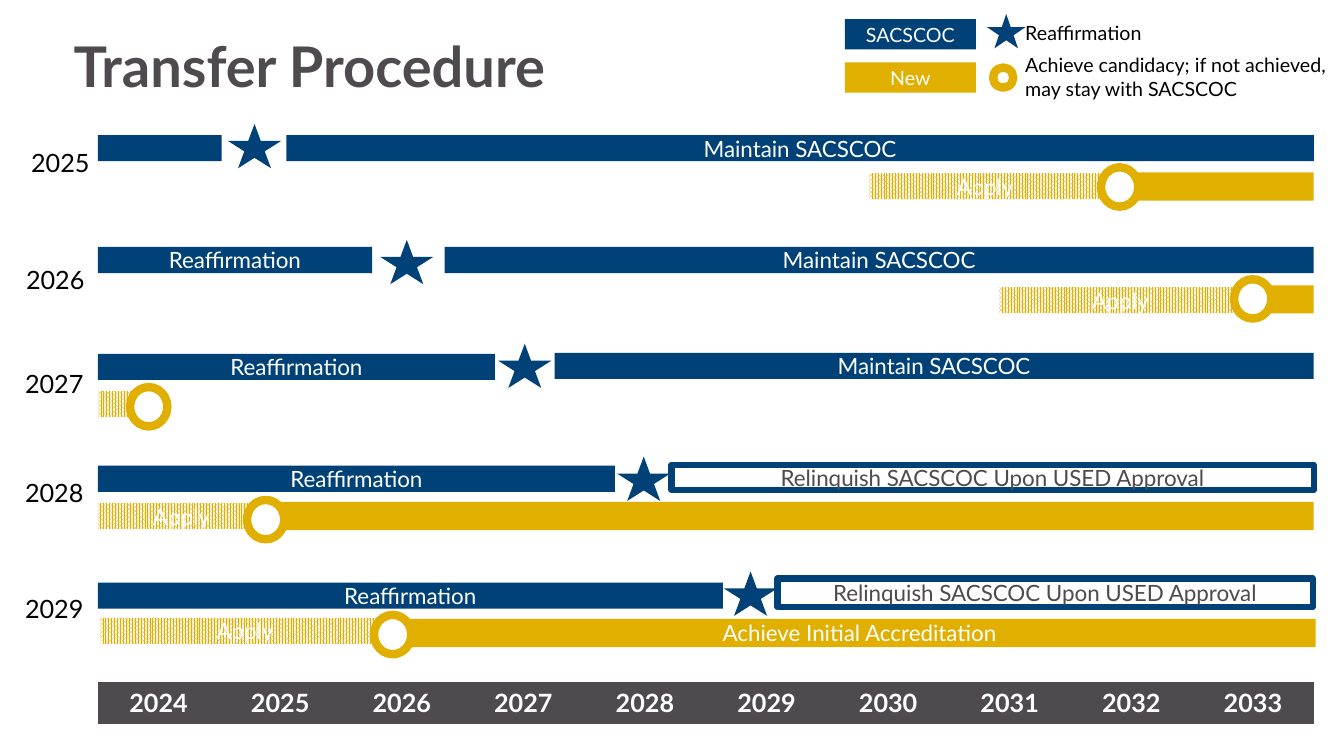
"""Builds the transfer procedure timeline slide."""
from pptx import Presentation
from pptx.dml.color import RGBColor
from pptx.enum.dml import MSO_PATTERN
from pptx.enum.shapes import MSO_SHAPE as Shape
from pptx.enum.text import MSO_ANCHOR as Anchor, PP_ALIGN as Align
from pptx.util import Inches, Pt

FONT = "Lato"
BLUE, GOLD, GREY, WHITE, BLACK = "004278", "E1AF00", "4E4A4E", "FFFFFF", "000000"
LEFT, RIGHT = 0.97, 13.03
YEARS = range(2024, 2034)
NO_GRID_STYLE = "{2D5ABB26-0587-4C30-8999-92F81FD0307C}"
MAINTAIN = "Maintain SACSCOC"
RELINQUISH = "Relinquish SACSCOC Upon USED Approval"
ACHIEVE = "Achieve Initial Accreditation"

# Bars are (style, left, right, top, height, text); marks are (left, top).
ROWS = [
    {"year": "2025", "label": (0.21, 1.41), "star": (2.26, 1.23), "circle": (10.92, 1.66),
     "bars": [("blue", LEFT, 2.2, 1.34, 0.26, ""),
              ("blue", 2.84, RIGHT, 1.34, 0.26, MAINTAIN),
              ("gold", 11.2, RIGHT, 1.71, 0.28, ""),
              ("dots", 8.62, 10.92, 1.72, 0.26, "Apply")]},
    {"year": "2026", "label": (0.16, 2.57), "star": (3.77, 2.38), "circle": (12.24, 2.77),
     "bars": [("blue", LEFT, 3.69, 2.45, 0.26, "Reaffirmation"),
              ("blue", 4.41, RIGHT, 2.45, 0.26, MAINTAIN),
              ("gold", 12.53, RIGHT, 2.83, 0.28, ""),
              ("dots", 9.91, 12.31, 2.85, 0.26, "Apply")]},
    {"year": "2027", "label": (0.15, 3.61), "star": (4.94, 3.41), "circle": (1.29, 3.84),
     "bars": [("blue", LEFT, 4.91, 3.51, 0.26, "Reaffirmation"),
              ("blue", 5.5, RIGHT, 3.5, 0.26, MAINTAIN),
              ("dots", LEFT, 1.59, 3.88, 0.26, "")]},
    {"year": "2028", "label": (0.15, 4.69), "star": (6.12, 4.53), "circle": (2.45, 4.96),
     "bars": [("blue", LEFT, 6.1, 4.62, 0.26, "Reaffirmation"),
              ("outline", 6.66, RIGHT, 4.61, 0.25, RELINQUISH),
              ("gold", 2.77, RIGHT, 4.98, 0.28, ""),
              ("dots", LEFT, 2.63, 4.99, 0.26, "Apply")]},
    {"year": "2029", "label": (0.15, 5.84), "star": (7.18, 5.67), "circle": (3.71, 6.1),
     "bars": [("blue", LEFT, 7.17, 5.78, 0.26, "Reaffirmation"),
              ("outline", 7.71, 13.02, 5.74, 0.28, RELINQUISH),
              ("gold", 4, 13.05, 6.14, 0.28, ACHIEVE),
              ("dots", 0.99, 3.87, 6.13, 0.26, "Apply")]},
]
LEGEND_BARS = [("blue", 0.19, "SACSCOC"), ("gold", 0.62, "New")]
LEGEND_NOTES = [
    (0.16, 0.34, ["Reaffirmation"]),
    (0.48, 0.57, ["Achieve candidacy; if not achieved,", "may stay with SACSCOC"]),
]


def color(value):
    return RGBColor.from_string(value)


def style_text(para, size, ink, align=Align.LEFT, bold=False):
    para.alignment = align
    para.font.name, para.font.size, para.font.bold = FONT, Pt(size), bold
    para.font.color.rgb = color(ink)


def add_shape(page, kind, box, fill=None, line=None, weight=0):
    shape = page.shapes.add_shape(kind, *map(Inches, box))
    shape.shadow.inherit = False
    if fill:
        shape.fill.solid()
        shape.fill.fore_color.rgb = color(fill)
    else:
        shape.fill.background()
    if line:
        shape.line.color.rgb = color(line)
        shape.line.width = Pt(weight)
    else:
        shape.line.fill.background()
    return shape


def add_bar(page, style, box, text, size=16):
    if style == "outline":
        bar = add_shape(page, Shape.RECTANGLE, box, line=BLUE, weight=4.5)
    else:
        bar = add_shape(page, Shape.RECTANGLE, box, BLUE if style == "blue" else GOLD)
    if style == "dots":
        bar.fill.patterned()
        bar.fill.pattern = MSO_PATTERN.PERCENT_80
        bar.fill.fore_color.rgb = color(GOLD)
        bar.fill.back_color.rgb = color(WHITE)
    if text:
        bar.text_frame.text = text
        bar.text_frame.vertical_anchor = Anchor.MIDDLE
        ink = GREY if style == "outline" else WHITE
        style_text(bar.text_frame.paragraphs[0], size, ink, Align.CENTER)


def add_star(page, left, top, width=0.53, height=0.44):
    add_shape(page, Shape.STAR_5_POINT, (left, top, width, height), BLUE)


def add_circle(page, left, top, width=0.37, height=0.39):
    add_shape(page, Shape.OVAL, (left, top, width, height), WHITE, GOLD, 6)


def add_label(page, box, lines, size):
    frame = page.shapes.add_textbox(*map(Inches, box)).text_frame
    frame.word_wrap = False
    frame.text = "\n".join(lines)
    for para in frame.paragraphs:
        style_text(para, size, BLACK)


def add_title(page):
    title = page.shapes.title
    title.left, title.top, title.width, title.height = map(Inches, (0.63, -0.04, 11.5, 1.45))
    title.text_frame.text = "Transfer Procedure"
    title.text_frame.vertical_anchor = Anchor.MIDDLE
    para = title.text_frame.paragraphs[0]
    para.line_spacing = 0.9
    style_text(para, 40, GREY, bold=True)


def add_row(page, row):
    for style, left, right, top, height, text in row["bars"]:
        add_bar(page, style, (left, top, right - left, height), text)
    add_star(page, *row["star"])
    add_circle(page, *row["circle"])
    add_label(page, (*row["label"], 0.83, 0.4), [row["year"]], 18)


def add_axis(page):
    box = map(Inches, (LEFT, 6.77, RIGHT - LEFT, 0.41))
    table = page.shapes.add_table(1, len(YEARS), *box).table
    table.first_row = table.horz_banding = False
    table._tbl.tblPr[0].text = NO_GRID_STYLE
    for cell, year in zip(table.iter_cells(), YEARS):
        cell.text = str(year)
        cell.fill.solid()
        cell.fill.fore_color.rgb = color(GREY)
        style_text(cell.text_frame.paragraphs[0], 18, WHITE, Align.CENTER, True)


def add_legend(page):
    for style, top, text in LEGEND_BARS:
        add_bar(page, style, (8.38, top, 1.3, 0.3), text, 14)
    add_star(page, 9.79, 0.14, 0.38, 0.34)
    add_circle(page, 9.85, 0.67, 0.2, 0.2)
    for top, height, lines in LEGEND_NOTES:
        add_label(page, (10.07, top, 3.21, height), lines, 14)


def main():
    deck = Presentation()
    deck.slide_width, deck.slide_height = Inches(13.33), Inches(7.5)
    page = deck.slides.add_slide(deck.slide_layouts[5])
    add_title(page)
    for row in ROWS:
        add_row(page, row)
    add_axis(page)
    add_legend(page)
    deck.save("out.pptx")


if __name__ == "__main__":
    main()
